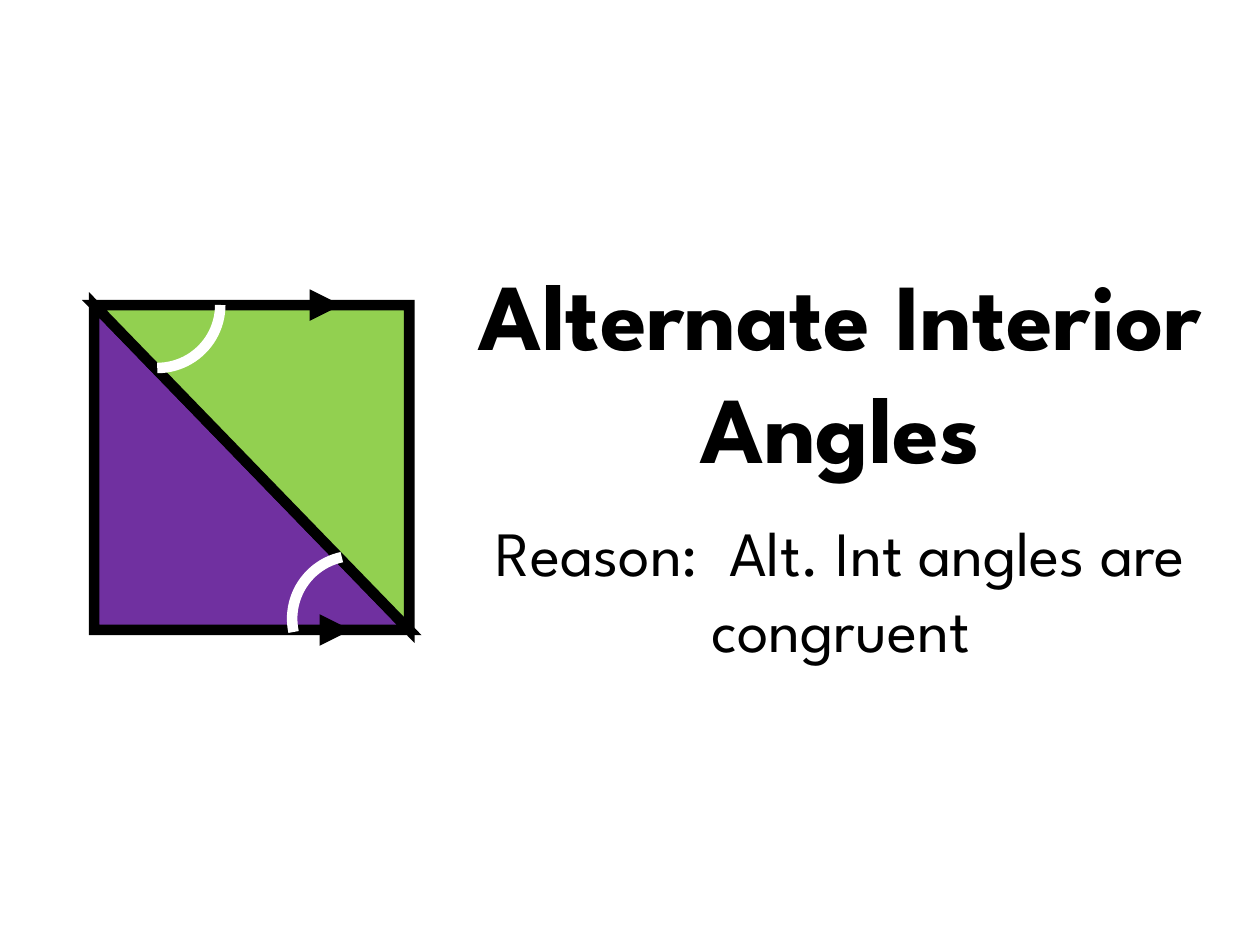
from pptx import Presentation
from pptx.dml.color import RGBColor
from pptx.enum.shapes import MSO_CONNECTOR, MSO_SHAPE
from pptx.enum.text import MSO_AUTO_SIZE, PP_ALIGN
from pptx.oxml.ns import qn
from pptx.util import Cm, Pt
from lxml.etree import SubElement


def color(code):
    return RGBColor.from_string(code)


def stroke(line, code):
    """Draw a thick line with sharp corners."""
    line.width = Pt(6)
    line.fill.solid()
    line.fill.fore_color.rgb = color(code)
    ln = line._get_or_add_ln()
    SubElement(ln, qn("a:miter"), lim="800000")
    return ln


prs = Presentation()
prs.slide_width, prs.slide_height = Cm(25.4), Cm(19.05)
slide = prs.slides.add_slide(prs.slide_layouts[6])
shapes = slide.shapes

# Rectangle made of two right triangles
left, top, width, height = 1.9, 6.15, 6.35, 6.55
group = shapes.add_group_shape()
for fill, turn in (("7030A0", 0), ("92D050", 180)):
    half = group.shapes.add_shape(
        MSO_SHAPE.RIGHT_TRIANGLE, Cm(left), Cm(top), Cm(width), Cm(height))
    half.rotation = turn
    half.shadow.inherit = False
    half.fill.solid()
    half.fill.fore_color.rgb = color(fill)
    stroke(half.line, "000000")

# Title and reason
box = shapes.add_textbox(Cm(8.69), Cm(5.03), Cm(16.51), Cm(8.71))
frame = box.text_frame
frame.word_wrap = True
frame.auto_size = MSO_AUTO_SIZE.SHAPE_TO_FIT_TEXT
title = frame.paragraphs[0]
reason = frame.add_paragraph()
for para, text, size, bold in (
        (title, "Alternate Interior Angles", 54, True),
        (reason, "Reason:  Alt. Int angles are congruent", 36, False)):
    para.alignment = PP_ALIGN.CENTER
    space = SubElement(para._p.get_or_add_pPr(), qn("a:spcBef"))
    SubElement(space, qn("a:spcPct"), val="50000")
    run = para.add_run()
    run.text = text
    run.font.name = "League Spartan"
    run.font.size = Pt(size)
    run.font.bold = bold
    run.font.color.rgb = color("000000")

# Arrows that mark the parallel sides
for start, level in ((4.78, top), (4.98, top + height)):
    arrow = shapes.add_connector(
        MSO_CONNECTOR.STRAIGHT, Cm(start), Cm(level), Cm(start + 2.1), Cm(level))
    ln = stroke(arrow.line, "000000")
    SubElement(ln, qn("a:tailEnd"), type="triangle")
    SubElement(arrow._element.spPr, qn("a:effectLst"))

# Arcs that mark the equal angles
for x, y, turn in ((1.9, 4.88, 90), (5.89, 11.2, 257.8)):
    arc = shapes.add_shape(MSO_SHAPE.ARC, Cm(x), Cm(y), Cm(2.54), Cm(2.54))
    arc.rotation = turn
    arc.shadow.inherit = False
    arc.fill.background()
    stroke(arc.line, "FFFFFF")

prs.save("out.pptx")
